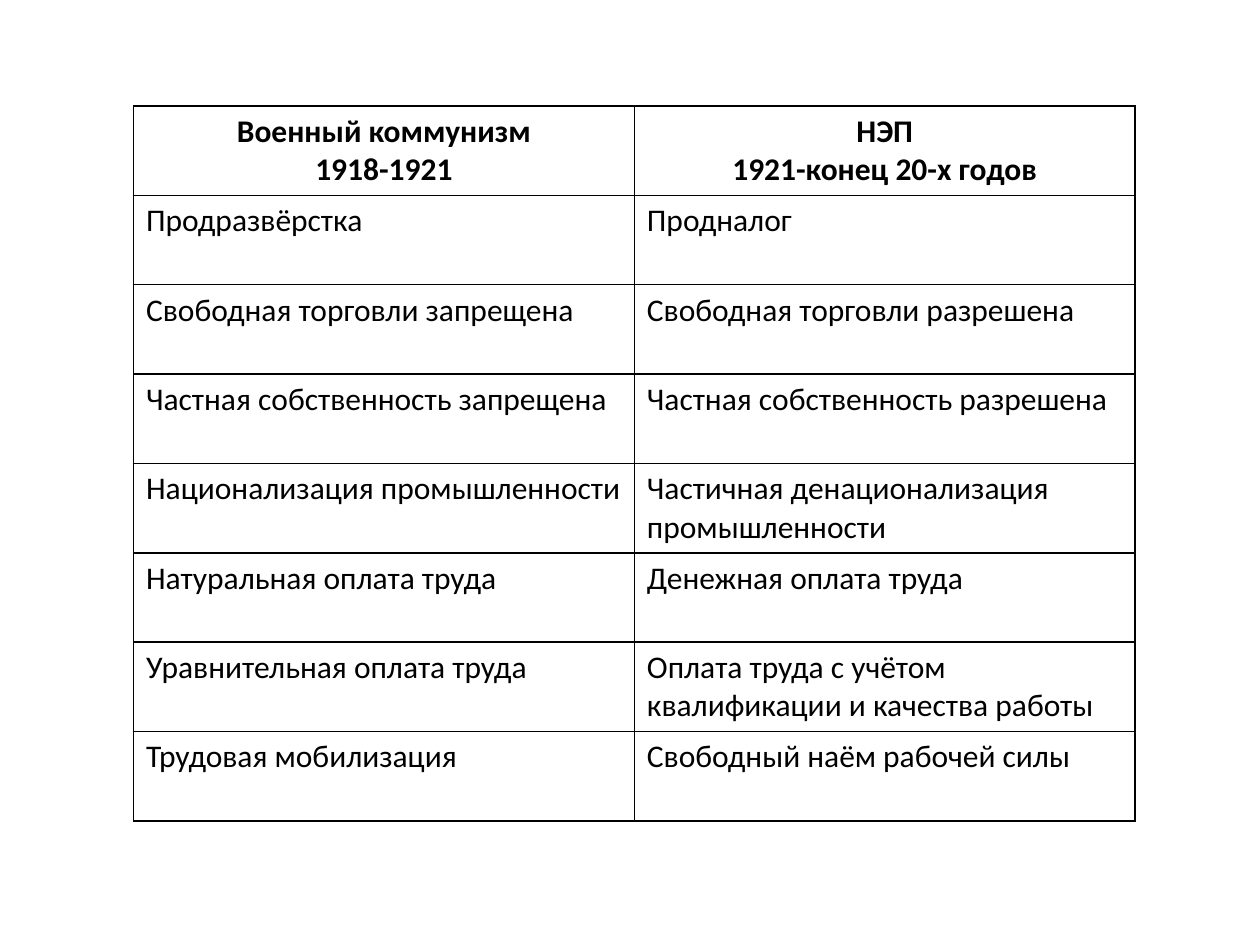
"""Builds a slide comparing War Communism with the New Economic Policy."""
import lxml.etree
import pptx
import pptx.dml.color
import pptx.enum.text
import pptx.oxml.ns
import pptx.util

Inches = pptx.util.Inches
Pt = pptx.util.Pt

COLORS = {"text": "000000", "border": "000000", "cell": "FFFFFF"}
FONT = "Calibri"
POLICIES = [
    ("Военный коммунизм\n1918-1921", "НЭП\n1921-конец 20-х годов"),
    ("Продразвёрстка", "Продналог"),
    ("Свободная торговли запрещена", "Свободная торговли разрешена"),
    ("Частная собственность запрещена", "Частная собственность разрешена"),
    ("Национализация промышленности", "Частичная денационализация промышленности"),
    ("Натуральная оплата труда", "Денежная оплата труда"),
    ("Уравнительная оплата труда", "Оплата труда с учётом квалификации и качества работы"),
    ("Трудовая мобилизация", "Свободный наём рабочей силы"),
]


def rgb(name):
    """Return the named colour."""
    return pptx.dml.color.RGBColor.from_string(COLORS[name])


def add_borders(cell):
    """Draw a thin line on all four sides of a cell."""
    qn = pptx.oxml.ns.qn
    properties = cell._tc.get_or_add_tcPr()
    for position, side in enumerate(("lnL", "lnR", "lnT", "lnB")):
        border = lxml.etree.Element(qn(f"a:{side}"), w=str(Pt(1)))
        fill = lxml.etree.SubElement(border, qn("a:solidFill"))
        lxml.etree.SubElement(fill, qn("a:srgbClr"), val=COLORS["border"])
        properties.insert(position, border)


def fill_cell(cell, wording, is_heading):
    """Write and format one cell."""
    cell.fill.solid()
    cell.fill.fore_color.rgb = rgb("cell")
    add_borders(cell)
    cell.text_frame.text = wording
    align = pptx.enum.text.PP_ALIGN
    for paragraph in cell.text_frame.paragraphs:
        paragraph.alignment = align.CENTER if is_heading else align.LEFT
        for run in paragraph.runs:
            run.font.name = FONT
            run.font.size = Pt(18)
            run.font.bold = is_heading
            run.font.color.rgb = rgb("text")


def add_comparison(slide, policies):
    """Add the comparison table with equal rows and columns."""
    comparison = slide.shapes.add_table(
        len(policies), len(policies[0]),
        Inches(1.06), Inches(0.84), Inches(7.95), Inches(5.67),
    ).table
    for row, wordings in enumerate(policies):
        for column, wording in enumerate(wordings):
            fill_cell(comparison.cell(row, column), wording, row == 0)


def main():
    """Build and save the presentation."""
    presentation = pptx.Presentation()
    presentation.slide_width = Inches(10)
    presentation.slide_height = Inches(7.5)
    slide = presentation.slides.add_slide(presentation.slide_layouts[6])
    add_comparison(slide, POLICIES)
    presentation.save("out.pptx")


if __name__ == "__main__":
    main()
